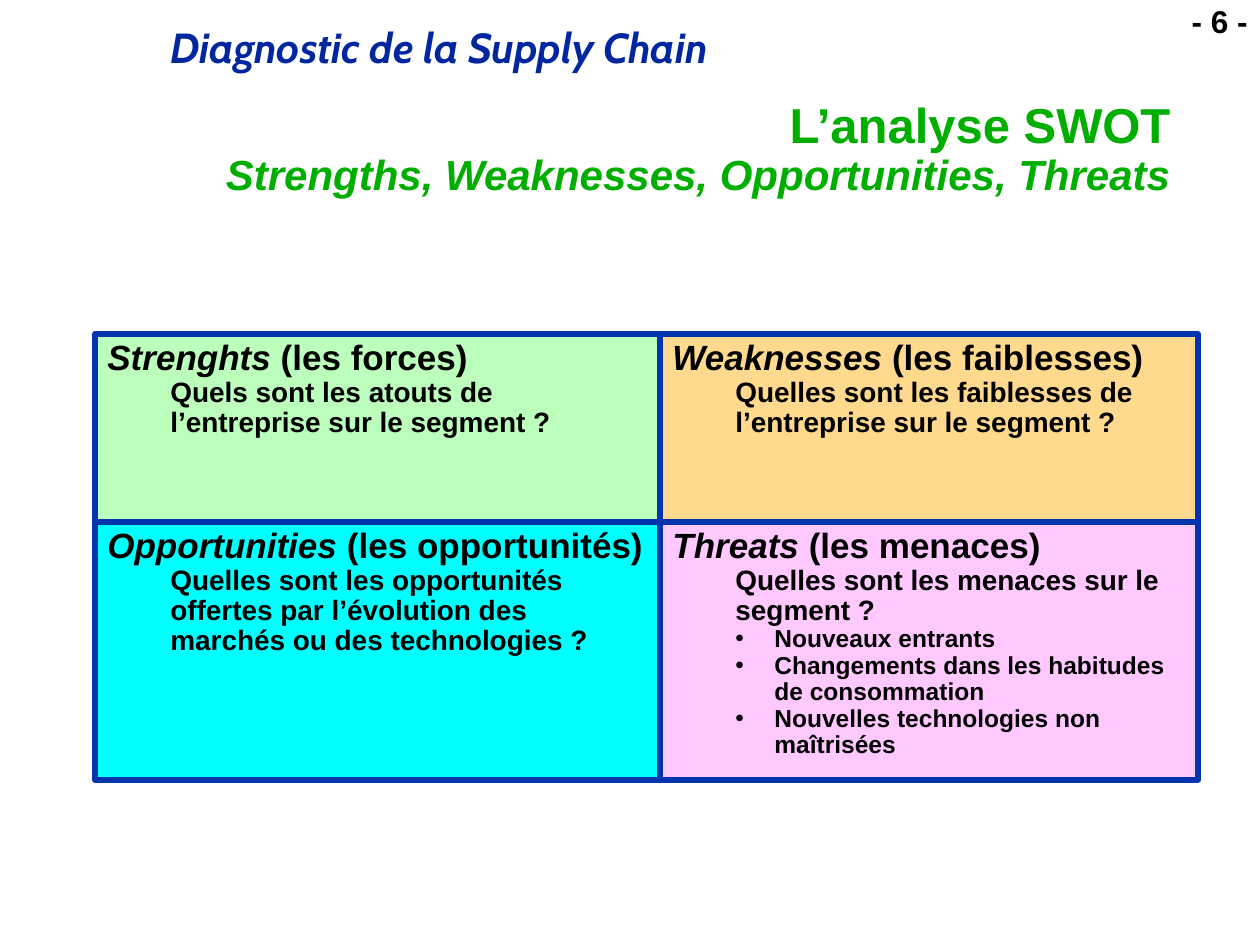
from pptx import Presentation
from pptx.dml.color import RGBColor
from pptx.enum.shapes import MSO_SHAPE
from pptx.enum.text import MSO_ANCHOR, MSO_AUTO_SIZE, PP_ALIGN
from pptx.util import Emu, Pt
from lxml.etree import SubElement
from pptx.oxml.ns import qn

BLUE = RGBColor(0x00, 0x27, 0x9F)
BORDER = RGBColor(0x02, 0x34, 0xAD)
GREEN = RGBColor(0x00, 0xAE, 0x00)
BLACK = RGBColor(0x00, 0x00, 0x00)
MINT = RGBColor(0xBC, 0xFF, 0xBC)
ORANGE = RGBColor(0xFF, 0xCC, 0x66)
CYAN = RGBColor(0x00, 0xFF, 0xFF)
PINK = RGBColor(0xFF, 0x99, 0xFF)


def px(length):
    return Emu(round(length * 914400 / 126))


def write(paragraph, text, size, color=BLACK, font="Arial", italic=False,
          align=PP_ALIGN.LEFT, indent=0, hanging=0, bullet=None):
    """Append a bold run and format its paragraph."""
    paragraph.alignment = align
    paragraph.line_spacing = 0.9
    paragraph.space_before = Pt(0)
    properties = paragraph._p.get_or_add_pPr()
    properties.set("marL", str(px(indent)))
    properties.set("indent", str(-px(hanging)))
    if bullet:
        SubElement(properties, qn("a:buFont"), typeface="Arial")
        SubElement(properties, qn("a:buChar"), char=bullet)
    run = paragraph.add_run()
    run.text = text
    run.font.name = font
    run.font.size = Pt(size)
    run.font.bold = True
    run.font.italic = italic
    run.font.color.rgb = color


presentation = Presentation()
presentation.slide_width = px(1260)
presentation.slide_height = px(945)
slide = presentation.slides.add_slide(presentation.slide_layouts[5])

# Running header and page number
header = slide.shapes.add_textbox(px(158), px(21), px(1018), px(58)).text_frame
header.word_wrap = True
write(header.paragraphs[0], "Diagnostic de la Supply Chain", size=24,
      color=BLUE, font="Cabin", italic=True)

page_number = slide.shapes.add_textbox(px(1145), px(0), px(115), px(47)).text_frame
page_number.word_wrap = True
write(page_number.paragraphs[0], "- 6 -", size=18, align=PP_ALIGN.RIGHT)

# Title
title = slide.shapes.title
title.left, title.top, title.width, title.height = px(185), px(96), px(998), px(108)
title.text_frame.auto_size = MSO_AUTO_SIZE.NONE
title.text_frame.vertical_anchor = MSO_ANCHOR.MIDDLE
heading = title.text_frame.paragraphs[0]
write(heading, "L’analyse SWOT", size=28, color=GREEN, align=PP_ALIGN.RIGHT)
heading.add_line_break()
write(heading, "Strengths, Weaknesses, Opportunities, Threats", size=24,
      color=GREEN, italic=True, align=PP_ALIGN.RIGHT)

# SWOT matrix: English name, French name, question, examples, fill, opacity in %
columns = [(95, 565), (660, 538)]
rows = [(334, 188), (522, 258)]
quadrants = [
    ("Strenghts", "les forces",
     "Quels sont les atouts de l’entreprise sur le segment ?", [], MINT, 100),
    ("Weaknesses", "les faiblesses",
     "Quelles sont les faiblesses de l’entreprise sur le segment ?", [], ORANGE, 74),
    ("Opportunities", "les opportunités",
     "Quelles sont les opportunités offertes par l’évolution des marchés "
     "ou des technologies ?", [], CYAN, 100),
    ("Threats", "les menaces", "Quelles sont les menaces sur le segment ?",
     ["Nouveaux entrants",
      "Changements dans les habitudes de consommation",
      "Nouvelles technologies non maîtrisées"], PINK, 52),
]
for index, (name, french, question, examples, color, opacity) in enumerate(quadrants):
    left, width = columns[index % 2]
    top, height = rows[index // 2]
    quadrant = slide.shapes.add_shape(
        MSO_SHAPE.RECTANGLE, px(left), px(top), px(width), px(height))
    quadrant.shadow.inherit = False
    quadrant.fill.solid()
    quadrant.fill.fore_color.rgb = color
    if opacity < 100:
        fill_color = quadrant._element.spPr.find(qn("a:solidFill"))[0]
        SubElement(fill_color, qn("a:alpha"), val=str(opacity * 1000))
    quadrant.line.color.rgb = BORDER
    quadrant.line.width = Pt(3)

    frame = quadrant.text_frame
    frame.word_wrap = True
    frame.vertical_anchor = MSO_ANCHOR.TOP
    write(frame.paragraphs[0], name, size=20, italic=True)
    write(frame.paragraphs[0], f" ({french})", size=20)
    write(frame.add_paragraph(), question, size=16, indent=63)
    for example in examples:
        write(frame.add_paragraph(), example, size=14, indent=102, hanging=39,
              bullet="•")

presentation.save("out.pptx")
